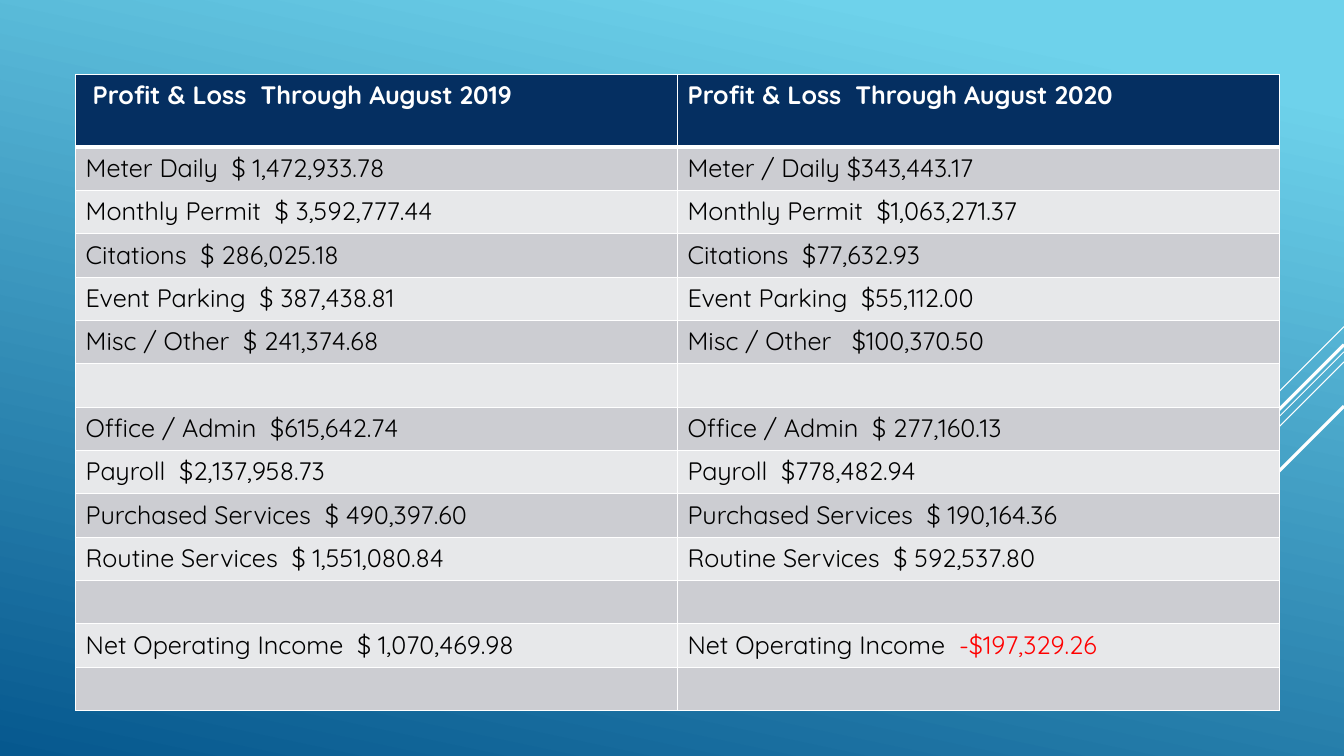
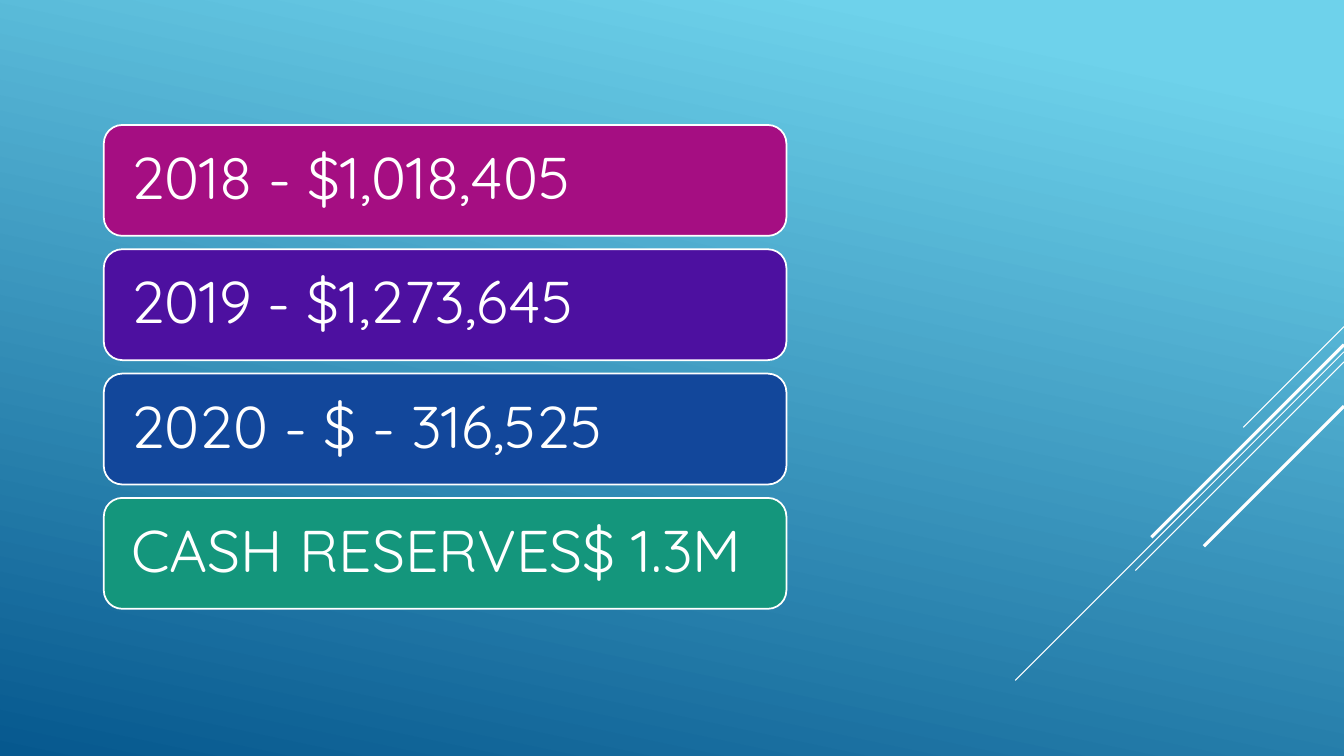
from collections import namedtuple
from dataclasses import dataclass

from lxml.etree import SubElement
from pptx import Presentation
from pptx.dml.color import RGBColor
from pptx.enum.shapes import MSO_CONNECTOR, MSO_SHAPE
from pptx.enum.text import MSO_ANCHOR, PP_ALIGN
from pptx.oxml.ns import qn
from pptx.util import Inches, Pt

Box = namedtuple("Box", "left top width height")


@dataclass(frozen=True)
class Theme:
    font: str = "Quicksand"
    table_size: float = 18
    card_size: float = 42
    white: str = "FFFFFF"
    black: str = "000000"
    negative: str = "FF0000"
    sky: str = "6ED2EB"
    deep: str = "06588E"
    header: str = "052F61"
    bands: tuple = ("CCCDD2", "E7E8EA")
    cards: tuple = ("A50E82", "4D10A0", "12479B", "14967C")
    thin: float = 0.75
    thick: float = 2.25
    cell_border: float = 1
    header_border: float = 3
    card_border: float = 1.25


THEME = Theme()
SLIDE = Box(0, 0, 13.33, 7.5)
TABLE_BOX = Box(0.75, 0.74, 11.94, 6.31)
CARDS_BOX = Box(1.03, 1.24, 6.77, 4.8)
HEADER_HEIGHT = 0.72

# Each ray starts on the right edge at a height and runs down-left by a reach.
RAYS = (
    (3.24, 1.0, THEME.thin),
    (3.49, 3.26, THEME.thin),
    (3.59, 2.07, THEME.thin),
    (3.42, 1.91, THEME.thick),
    (4.03, 1.39, THEME.thick),
)

PROFIT_AND_LOSS = (
    ("Profit & Loss  Through August 2019", "Profit & Loss  Through August 2020"),
    ("Meter Daily  $ 1,472,933.78", "Meter / Daily $343,443.17"),
    ("Monthly Permit  $ 3,592,777.44", "Monthly Permit  $1,063,271.37"),
    ("Citations  $ 286,025.18", "Citations  $77,632.93"),
    ("Event Parking  $ 387,438.81", "Event Parking  $55,112.00"),
    ("Misc / Other  $ 241,374.68", "Misc / Other   $100,370.50"),
    ("", ""),
    ("Office / Admin  $615,642.74", "Office / Admin  $ 277,160.13"),
    ("Payroll  $2,137,958.73", "Payroll  $778,482.94"),
    ("Purchased Services  $ 490,397.60", "Purchased Services  $ 190,164.36"),
    ("Routine Services  $ 1,551,080.84", "Routine Services  $ 592,537.80"),
    ("", ""),
    ("Net Operating Income  $ 1,070,469.98", "Net Operating Income  -$197,329.26"),
    ("", ""),
)

RESERVES = (
    "2018 - $1,018,405",
    "2019 - $1,273,645",
    "2020 - $ - 316,525",
    "CASH RESERVES$ 1.3M",
)


def set_attributes(target, values):
    for name, value in values.items():
        setattr(target, name, value)


def paint(fill, color):
    fill.solid()
    fill.fore_color.rgb = RGBColor.from_string(color)


def draw_outline(line, color, width):
    paint(line.fill, color)
    line.width = Pt(width)


def add_run(paragraph, text, size, color, bold=False):
    run = paragraph.add_run()
    run.text = text
    set_attributes(run.font, {"name": THEME.font, "size": Pt(size), "bold": bold})
    run.font.color.rgb = RGBColor.from_string(color)


def paint_background(slide):
    fill = slide.background.fill
    fill.gradient()
    fill.gradient_angle = 258
    stops = ((0.1, THEME.sky), (1, THEME.deep))
    for stop, (position, color) in zip(fill.gradient_stops, stops):
        stop.position = position
        stop.color.rgb = RGBColor.from_string(color)


def add_rays(slide, box):
    right = box.left + box.width
    for height, reach, width in RAYS:
        top = box.top + height
        ends = (right, top, right - reach, top + reach)
        ray = slide.shapes.add_connector(MSO_CONNECTOR.STRAIGHT, *map(Inches, ends))
        draw_outline(ray.line, THEME.white, width)
        SubElement(ray.element.spPr, qn("a:effectLst"))


def add_themed_slide(presentation):
    slide = presentation.slides.add_slide(presentation.slide_layouts[6])
    paint_background(slide)
    add_rays(slide, SLIDE)
    return slide


def set_borders(cell, top, bottom):
    """Give the cell white borders; top and bottom are widths in points."""
    properties = cell._tc.get_or_add_tcPr()
    side = THEME.cell_border
    for tag, width in (("lnL", side), ("lnR", side), ("lnT", top), ("lnB", bottom)):
        border = SubElement(properties, qn(f"a:{tag}"), w=str(Pt(width)))
        fill = SubElement(border, qn("a:solidFill"))
        SubElement(fill, qn("a:srgbClr"), val=THEME.white)


def fill_cell(cell, text, row):
    """Style one cell by its row; a negative amount is set in red."""
    is_header = row == 0
    set_borders(
        cell,
        THEME.header_border if row == 1 else THEME.cell_border,
        THEME.header_border if is_header else THEME.cell_border,
    )
    paint(cell.fill, THEME.header if is_header else THEME.bands[(row - 1) % 2])
    paragraph = cell.text_frame.paragraphs[0]
    paragraph.font.size = Pt(THEME.table_size)
    label, sign, amount = text.partition("-$")
    color = THEME.white if is_header else THEME.black
    for part, part_color in ((label, color), (sign + amount, THEME.negative)):
        if part:
            add_run(paragraph, part, THEME.table_size, part_color, is_header)


def add_profit_table(slide, box):
    row_count, column_count = len(PROFIT_AND_LOSS), len(PROFIT_AND_LOSS[0])
    table = slide.shapes.add_table(row_count, column_count, *map(Inches, box)).table
    table.horz_banding = False
    for column in table.columns:
        column.width = Inches(box.width / column_count)
    body_height = (box.height - HEADER_HEIGHT) / (row_count - 1)
    for row, texts in enumerate(PROFIT_AND_LOSS):
        table.rows[row].height = Inches(body_height if row else HEADER_HEIGHT)
        for column, text in enumerate(texts):
            fill_cell(table.cell(row, column), text, row)
    table.cell(0, 0).margin_left = Inches(0.17)


def add_card(slide, box, text, color):
    card = slide.shapes.add_shape(MSO_SHAPE.ROUNDED_RECTANGLE, *map(Inches, box))
    card.shadow.inherit = False
    paint(card.fill, color)
    draw_outline(card.line, THEME.white, THEME.card_border)
    margin = Inches(0.22)
    set_attributes(card.text_frame, {
        "word_wrap": True,
        "vertical_anchor": MSO_ANCHOR.MIDDLE,
        "margin_left": margin,
        "margin_right": margin,
        "margin_top": margin,
        "margin_bottom": margin,
    })
    paragraph = card.text_frame.paragraphs[0]
    set_attributes(paragraph, {"alignment": PP_ALIGN.LEFT, "line_spacing": 0.9})
    add_run(paragraph, text, THEME.card_size, THEME.white)


def add_reserve_cards(slide, box):
    card_height = 1.1
    pitch = (box.height - card_height) / (len(RESERVES) - 1)
    for index, (text, color) in enumerate(zip(RESERVES, THEME.cards)):
        top = box.top + index * pitch
        add_card(slide, Box(box.left, top, box.width, card_height), text, color)


def main():
    presentation = Presentation()
    set_attributes(presentation, {
        "slide_width": Inches(SLIDE.width),
        "slide_height": Inches(SLIDE.height),
    })
    add_profit_table(add_themed_slide(presentation), TABLE_BOX)
    add_reserve_cards(add_themed_slide(presentation), CARDS_BOX)
    presentation.save("out.pptx")


if __name__ == "__main__":
    main()
